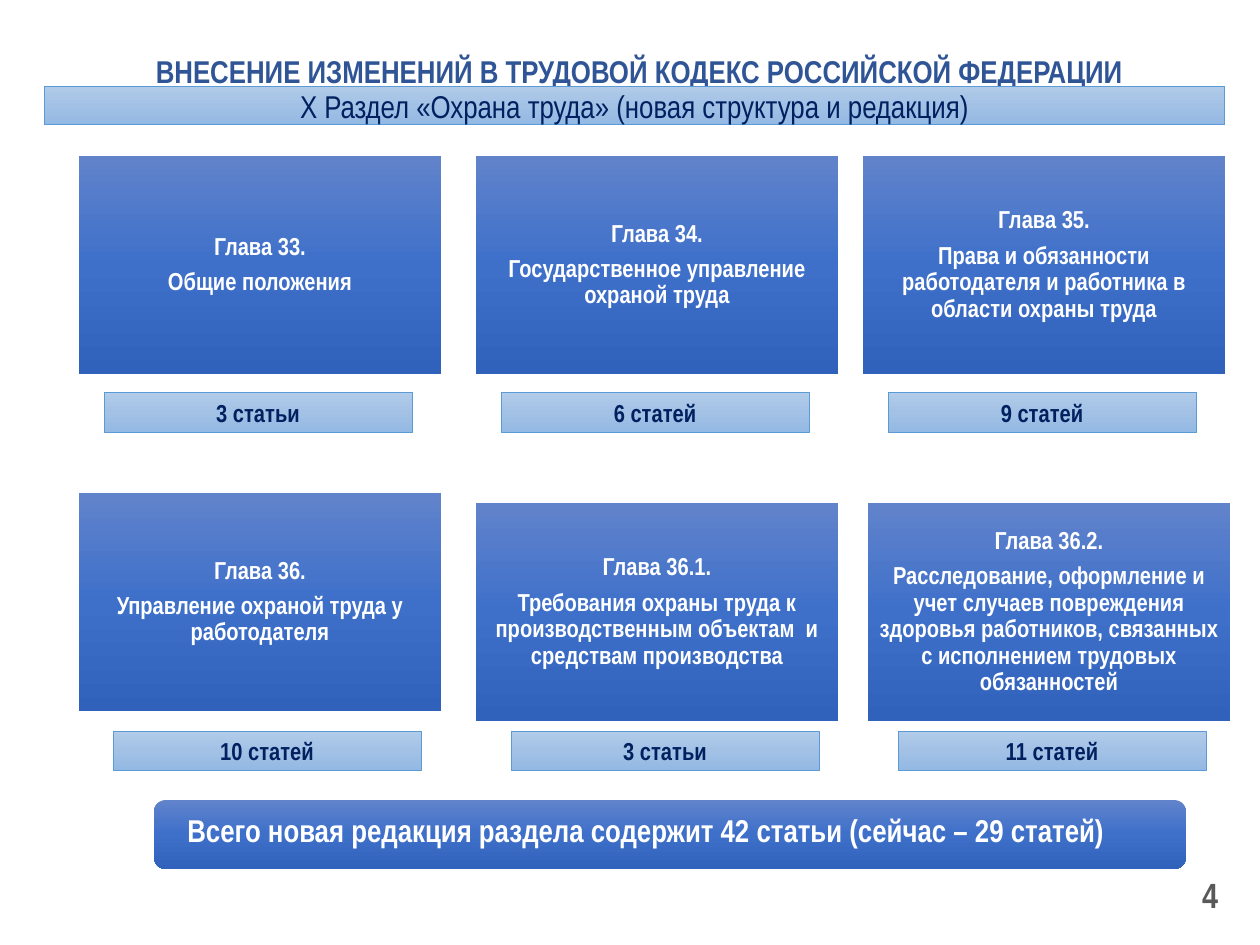
import copy
from dataclasses import dataclass

import pptx
import pptx.dml.color
import pptx.enum.shapes
import pptx.enum.text
import pptx.util

EMU_PER_PX = 914400 / 126
RECT = pptx.enum.shapes.MSO_SHAPE.RECTANGLE
ROUNDED = pptx.enum.shapes.MSO_SHAPE.ROUNDED_RECTANGLE
ALIGN = pptx.enum.text.PP_ALIGN
ANCHOR = pptx.enum.text.MSO_ANCHOR


@dataclass(frozen=True)
class Theme:
    font: str = "Arial Narrow"
    title: str = "2F5597"
    navy: str = "002060"
    white: str = "FFFFFF"
    gray: str = "595959"
    outline: str = "5B9BD5"
    light: tuple[str, ...] = ("B1CBE9", "A3C1E5", "93B9E4")
    dark: tuple[str, ...] = ("6183CB", "3E70CA", "3062BB")
    heading_size: int = 18
    body_size: int = 14
    number_size: int = 20


@dataclass(frozen=True)
class Box:
    left: int
    top: int
    width: int
    height: int


@dataclass(frozen=True)
class TextStyle:
    size: int
    color: str
    bold: bool = True
    align: ALIGN = ALIGN.CENTER
    anchor: ANCHOR = ANCHOR.MIDDLE
    line_spacing: float = 1.0
    space_after: int = 0
    margins: tuple[int, int, int, int] = (13, 6, 13, 6)


@dataclass(frozen=True)
class Chapter:
    number: str
    subject: str
    articles: str
    card_left: int
    card_top: int
    badge_left: int
    badge_top: int


THEME = Theme()
TITLE = TextStyle(THEME.heading_size, THEME.title, anchor=ANCHOR.BOTTOM, line_spacing=0.9)
SECTION = TextStyle(THEME.heading_size, THEME.navy, bold=False)
CARD = TextStyle(THEME.body_size, THEME.white, line_spacing=0.9, space_after=5,
                 margins=(8, 8, 8, 8))
BADGE = TextStyle(THEME.body_size, THEME.navy)
TOTAL = TextStyle(THEME.heading_size, THEME.white, align=ALIGN.LEFT, line_spacing=0.9,
                  margins=(30, 0, 30, 4))
NUMBER = TextStyle(THEME.number_size, THEME.gray, align=ALIGN.RIGHT)

CHAPTERS = (
    Chapter("Глава 33.", "Общие положения", "3 статьи", 79, 156, 104, 393),
    Chapter("Глава 34.", "Государственное управление охраной труда",
            "6 статей", 476, 156, 501, 393),
    Chapter("Глава 35.", "Права и обязанности работодателя и работника в области охраны труда",
            "9 статей", 863, 156, 888, 393),
    Chapter("Глава 36.", "Управление охраной труда у работодателя",
            "10 статей", 79, 493, 113, 731),
    Chapter("Глава 36.1.",
            "Требования охраны труда к производственным объектам  и средствам производства",
            "3 статьи", 476, 503, 511, 731),
    Chapter("Глава 36.2.",
            "Расследование, оформление и учет случаев повреждения здоровья работников, "
            "связанных с исполнением трудовых обязанностей",
            "11 статей", 868, 503, 898, 731),
)


def px(value: int) -> int:
    return round(value * EMU_PER_PX)


def rgb(value: str) -> pptx.dml.color.RGBColor:
    return pptx.dml.color.RGBColor.from_string(value)


def apply(target: object, values: dict[str, object]) -> None:
    for name, value in values.items():
        setattr(target, name, value)


def frame(box: Box) -> tuple[int, int, int, int]:
    return px(box.left), px(box.top), px(box.width), px(box.height)


def write(shape, lines: tuple[str, ...], style: TextStyle) -> None:
    text = shape.text_frame
    left, top, right, bottom = map(px, style.margins)
    apply(text, {
        "text": "\n".join(lines), "word_wrap": True,
        "auto_size": pptx.enum.text.MSO_AUTO_SIZE.NONE, "vertical_anchor": style.anchor,
        "margin_left": left, "margin_top": top,
        "margin_right": right, "margin_bottom": bottom,
    })
    for paragraph in text.paragraphs:
        apply(paragraph, {
            "alignment": style.align, "line_spacing": style.line_spacing,
            "space_before": pptx.util.Pt(0), "space_after": pptx.util.Pt(style.space_after),
        })
        for run in paragraph.runs:
            apply(run.font, {"name": THEME.font, "size": pptx.util.Pt(style.size),
                             "bold": style.bold})
            run.font.color.rgb = rgb(style.color)


def paint(shape, colors: tuple[str, ...]) -> None:
    """Fill from top to bottom with three evenly spaced colours."""
    shape.fill.gradient()
    shape.fill.gradient_angle = 270
    stop_list = shape._element.spPr.xpath(".//a:gsLst")[0]
    stop_list.insert(1, copy.deepcopy(stop_list[0]))
    for index, (stop, color) in enumerate(zip(shape.fill.gradient_stops, colors)):
        stop.position = index / 2
        stop.color.rgb = rgb(color)


def add_panel(slide, box: Box, lines: tuple[str, ...], style: TextStyle,
              colors: tuple[str, ...], outline: str | None = None, kind=RECT):
    panel = slide.shapes.add_shape(kind, *frame(box))
    panel.shadow.inherit = False
    paint(panel, colors)
    if outline:
        panel.line.color.rgb = rgb(outline)
        panel.line.width = pptx.util.Pt(0.5)
    else:
        panel.line.fill.background()
    write(panel, lines, style)
    return panel


def add_chapter(slide, chapter: Chapter) -> None:
    add_panel(slide, Box(chapter.card_left, chapter.card_top, 362, 218),
              (chapter.number, chapter.subject), CARD, THEME.dark)
    add_panel(slide, Box(chapter.badge_left, chapter.badge_top, 308, 40),
              (chapter.articles,), BADGE, THEME.light, THEME.outline)


def main() -> None:
    deck = pptx.Presentation()
    apply(deck, {"slide_width": px(1260), "slide_height": px(945)})
    slide = deck.slides.add_slide(deck.slide_layouts[5])

    # Title and section banner
    title = slide.shapes.title
    apply(title, dict(zip(("left", "top", "width", "height"), frame(Box(104, 16, 1071, 80)))))
    write(title, ("ВНЕСЕНИЕ ИЗМЕНЕНИЙ В ТРУДОВОЙ КОДЕКС РОССИЙСКОЙ ФЕДЕРАЦИИ",), TITLE)
    add_panel(slide, Box(44, 86, 1181, 39),
              ("Х Раздел «Охрана труда» (новая структура и редакция)",),
              SECTION, THEME.light, THEME.outline)

    # Chapters with their article counts
    for chapter in CHAPTERS:
        add_chapter(slide, chapter)

    # Total
    total = add_panel(slide, Box(154, 800, 1032, 69),
                      ("Всего новая редакция раздела содержит 42 статьи (сейчас – 29 статей)",),
                      TOTAL, THEME.dark, kind=ROUNDED)
    total.adjustments[0] = 0.17

    # Slide number
    number = slide.shapes.add_textbox(*frame(Box(937, 870, 294, 50)))
    write(number, ("4",), NUMBER)

    deck.save("out.pptx")


if __name__ == "__main__":
    main()
